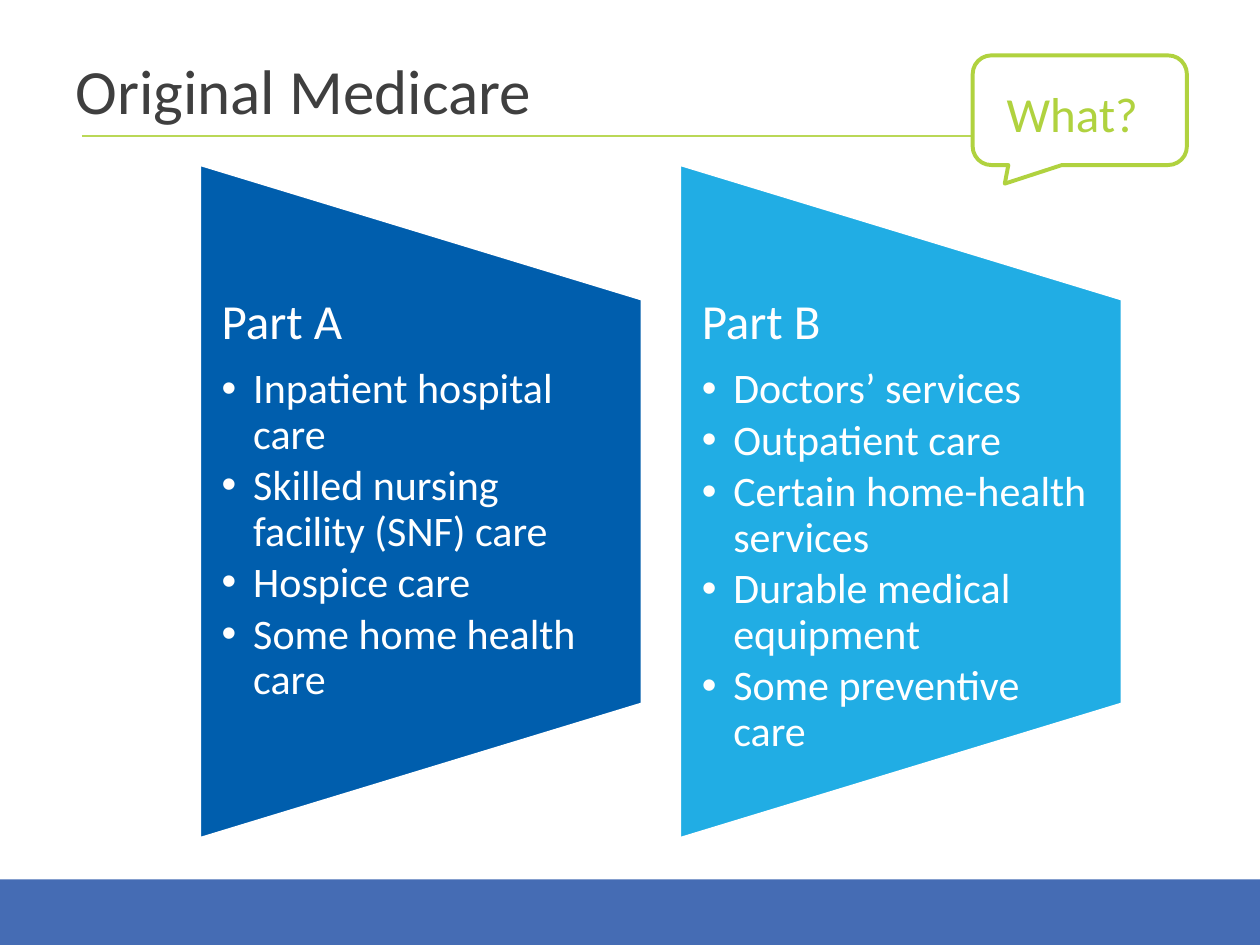
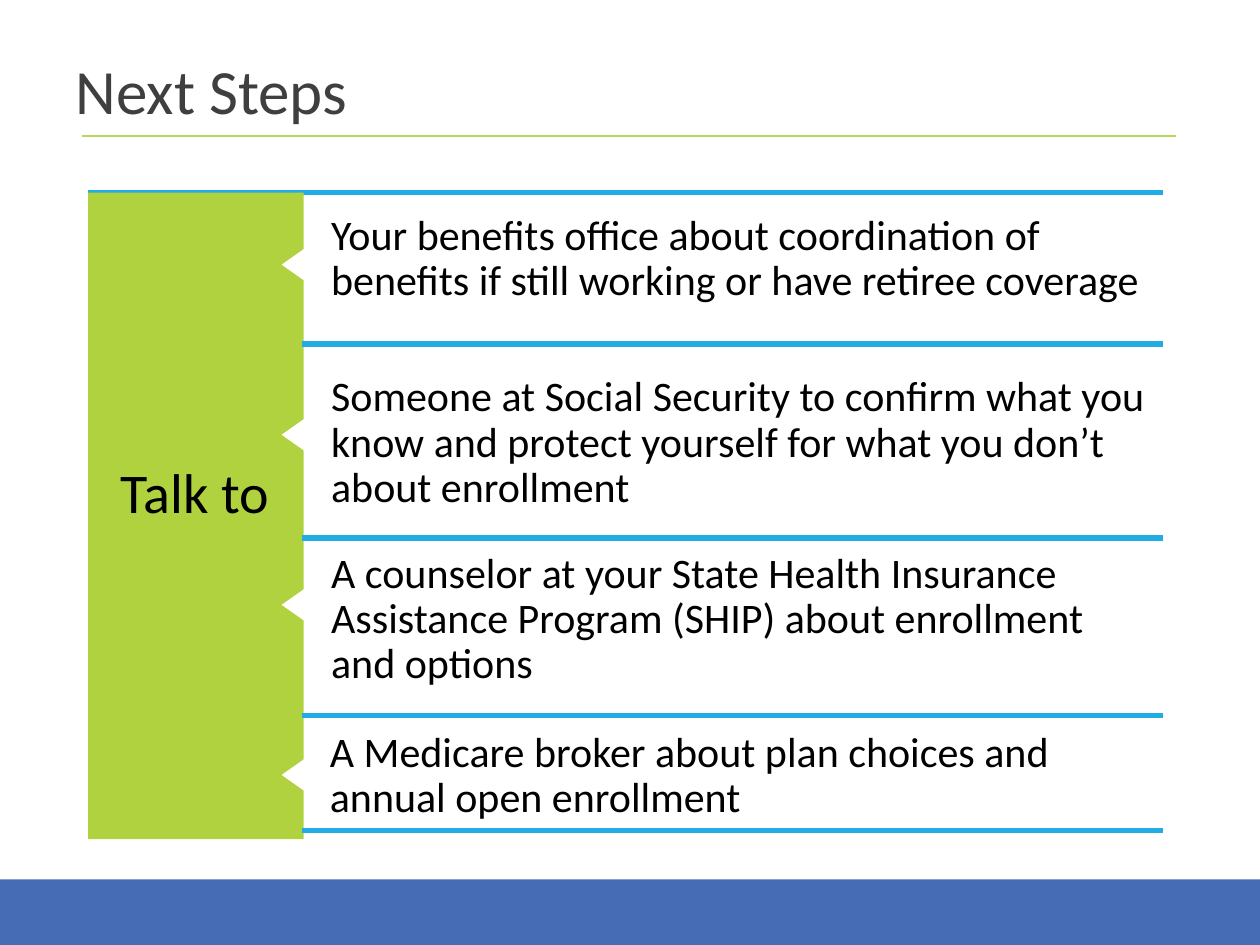
from pptx import Presentation
from pptx.util import Inches, Pt
from pptx.dml.color import RGBColor
from pptx.enum.shapes import MSO_SHAPE as Kind, MSO_CONNECTOR as Conn
from pptx.enum.text import MSO_ANCHOR as Anchor, MSO_AUTO_SIZE as Fit, PP_ALIGN as Align
from pptx.oxml.ns import qn
from lxml.etree import SubElement as Sub

# Content
PARTS = [
    ("Part A", "005EAD", ["Inpatient hospital care", "Skilled nursing facility (SNF) care",
                          "Hospice care", "Some home health care"]),
    ("Part B", "21ADE4", ["Doctors’ services", "Outpatient care",
                          "Certain home-health services", "Durable medical equipment",
                          "Some preventive care"]),
]
# Each step: text, left, top and height of its box, and the line below it
STEPS = [
    ("Your benefits office about coordination of benefits if still working "
     "or have retiree coverage", 2.53, 1.6, 1.28, 2.73),
    ("Someone at Social Security to confirm what you know and protect yourself "
     "for what you don’t about enrollment", 2.53, 2.88, 1.28, 4.27),
    ("A counselor at your State Health Insurance Assistance Program (SHIP) "
     "about enrollment and options", 2.53, 4.28, 1.28, 5.68),
    ("A Medicare broker about plan choices and annual open enrollment",
     2.52, 5.7, 0.97, 6.59),
]

# Shared style
FACE = "Calibri"
WHITE, BLACK, GREY = "FFFFFF", "000000", "3F3F3F"
BAND, RULE, GREEN, SKY = "456CB4", "BAD857", "B0D23F", "21ADE4"


def paint(code):
    return RGBColor.from_string(code)


def style(para, size, color, lead=None, after=None):
    para.font.name, para.font.size = FACE, Pt(size)
    para.font.color.rgb = paint(color)
    para.alignment = Align.LEFT
    if lead:
        para.line_spacing = lead
    if after:
        para.space_after = Pt(after)


def add_shape(slide, kind, box, fill, edge=None, width=1, turn=0):
    shape = slide.shapes.add_shape(kind, *map(Inches, box))
    shape.shadow.inherit = False
    shape.rotation = turn
    shape.fill.solid()
    shape.fill.fore_color.rgb = paint(fill)
    if edge:
        shape.line.color.rgb = paint(edge)
        shape.line.width = Pt(width)
    else:
        shape.line.fill.background()
    return shape


def add_line(slide, left, right, y, color, width):
    line = slide.shapes.add_connector(Conn.STRAIGHT, *map(Inches, (left, y, right, y)))
    line.line.color.rgb = paint(color)
    line.line.width = Pt(width)
    Sub(line._element.spPr, qn("a:effectLst"))


def set_frame(frame, side, edge, fit=Fit.NONE):
    frame.word_wrap = True
    frame.auto_size = fit
    frame.vertical_anchor = Anchor.TOP
    frame.margin_left = frame.margin_right = Inches(side)
    frame.margin_top = frame.margin_bottom = Inches(edge)
    return frame


def add_text(slide, box, side=0.1, edge=0.05, fit=Fit.NONE):
    shape = slide.shapes.add_textbox(*map(Inches, box))
    return set_frame(shape.text_frame, side, edge, fit)


def add_bullet(frame, text):
    para = frame.add_paragraph()
    para.text, para.level = text, 1
    props = para._p.get_or_add_pPr()
    props.set("marL", str(Inches(0.25)))
    props.set("indent", str(Inches(-0.25)))
    Sub(props, qn("a:buFont"), typeface="Arial")
    Sub(props, qn("a:buChar"), char="•")
    style(para, 24, WHITE, 0.9, 3.6)


def add_slide(deck, text):
    slide = deck.slides.add_slide(deck.slide_layouts[5])
    add_shape(slide, Kind.RECTANGLE, (0, 6.98, 10, 0.52), BAND)
    add_line(slide, 0.65, 9.33, 1.08, RULE, 1.5)
    title = slide.shapes.title
    title.left, title.top, title.width, title.height = map(Inches, (0.5, 0.22, 9, 1.06))
    title.text = text
    set_frame(title.text_frame, 0.1, 0.05).vertical_anchor = Anchor.MIDDLE
    style(title.text_frame.paragraphs[0], 36, GREY, 0.9)
    return slide


def build_parts(deck):
    slide = add_slide(deck, "Original Medicare")
    # Panels lie on their side, so width and height swap when drawn
    long, short, left, gap = 5.39, 3.54, 1.57, 3.81
    for i, (name, color, items) in enumerate(PARTS):
        x = left + i * gap
        add_shape(slide, Kind.FLOWCHART_MANUAL_OPERATION,
                  (x - (long - short) / 2, 2.21, long, short), color, WHITE, 3.78, 270)
        frame = add_text(slide, (x, 2.36, short, 3.24), 0.19, 0)
        head = frame.paragraphs[0]
        head.text = name
        style(head, 28, WHITE, 0.9, 9.8)
        for item in items:
            add_bullet(frame, item)
    # Callout
    call = add_shape(slide, Kind.ROUNDED_RECTANGULAR_CALLOUT,
                     (7.72, 0.44, 1.7, 0.87), WHITE, GREEN, 2.25)
    for i, value in enumerate((-0.35, 0.67, 0.17)):
        call.adjustments[i] = value
    label = add_shape(slide, Kind.RECTANGLE, (7.89, 0.61, 1.42, 0.57), WHITE)
    frame = set_frame(label.text_frame, 0.1, 0.05, Fit.SHAPE_TO_FIT_TEXT)
    frame.text = "What?"
    style(frame.paragraphs[0], 28, GREEN)


def build_steps(deck):
    slide = add_slide(deck, "Next Steps")
    # Side panel and list of steps
    add_line(slide, 0.7, 9.23, 1.53, SKY, 3)
    add_shape(slide, Kind.RECTANGLE, (0.7, 1.53, 1.71, 5.13), GREEN)
    for text, left, top, height, below in STEPS:
        frame = add_text(slide, (left, top, 6.7, height), 0.1, 0.1)
        frame.text = text
        style(frame.paragraphs[0], 24, BLACK, 0.9)
        add_line(slide, 2.4, 9.23, below, SKY, 3)
    # Notches in the panel
    for i in range(len(STEPS)):
        add_shape(slide, Kind.ISOSCELES_TRIANGLE,
                  (2.17, 1.94 + 1.35 * i, 0.45, 0.32), WHITE, turn=270)
    frame = add_text(slide, (0.86, 3.58, 1.71, 0.97), fit=Fit.SHAPE_TO_FIT_TEXT)
    frame.text = "Talk to"
    style(frame.paragraphs[0], 32, BLACK)


def main():
    deck = Presentation()
    deck.slide_width, deck.slide_height = Inches(10), Inches(7.5)
    build_parts(deck)
    build_steps(deck)
    deck.save("out.pptx")


if __name__ == "__main__":
    main()
